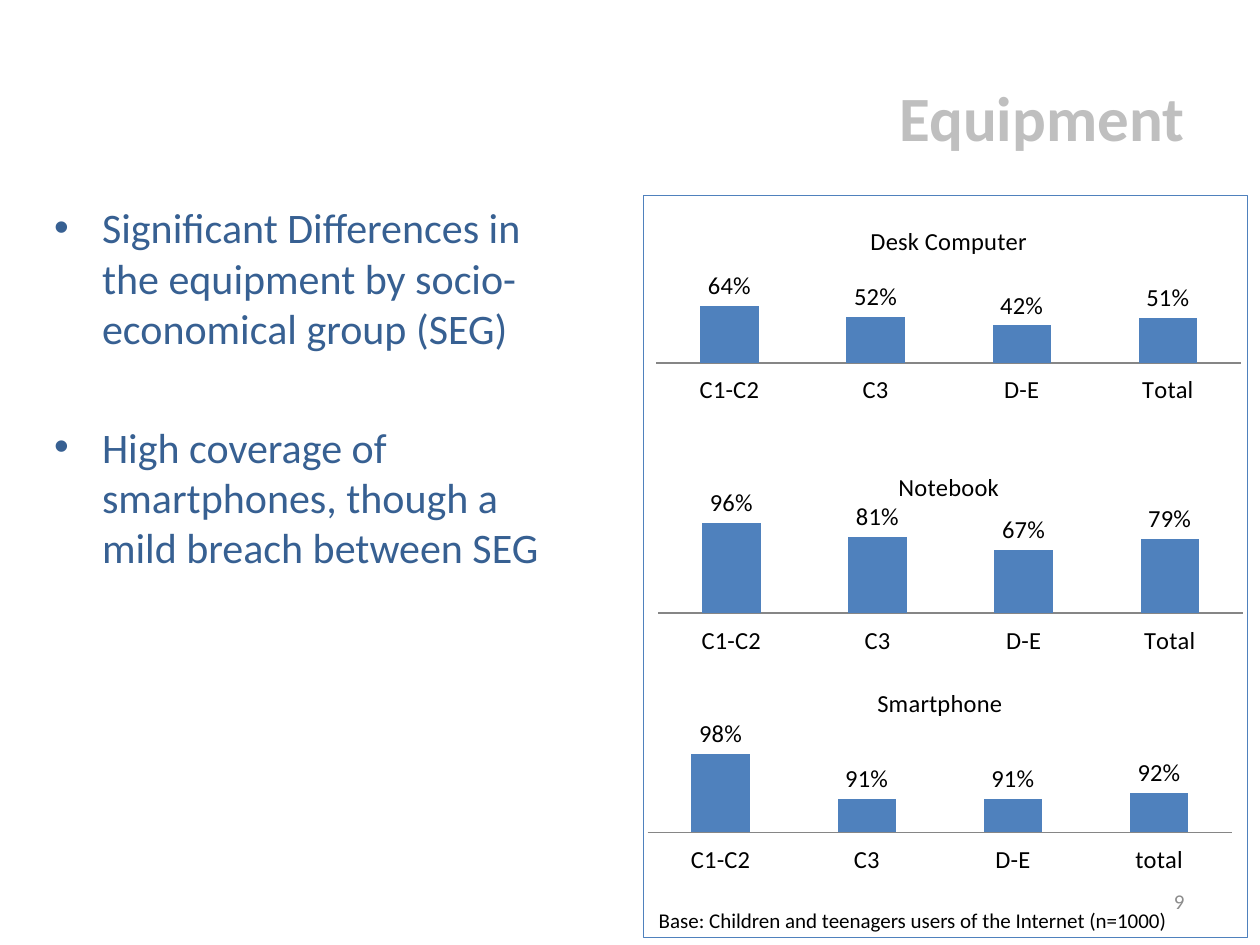
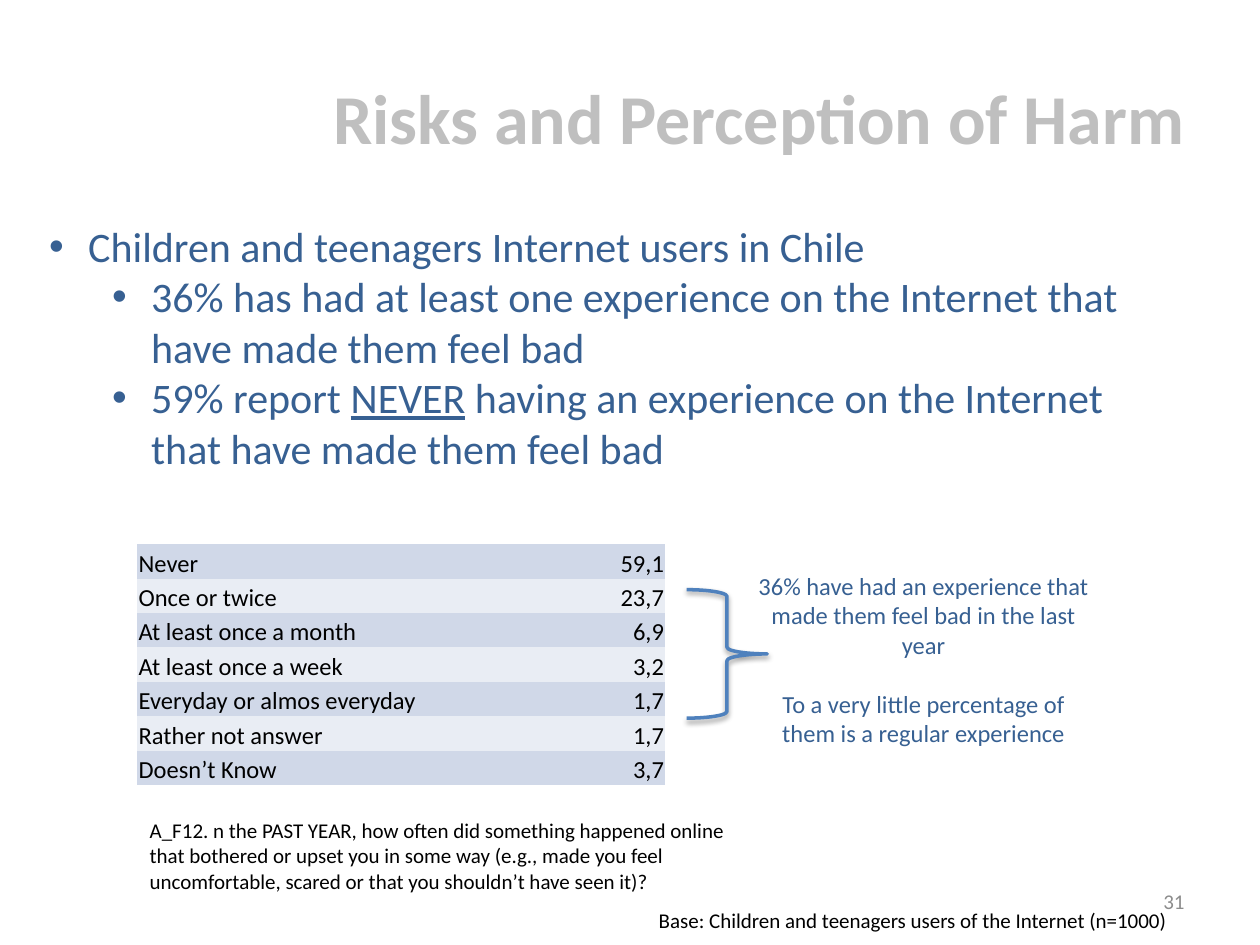
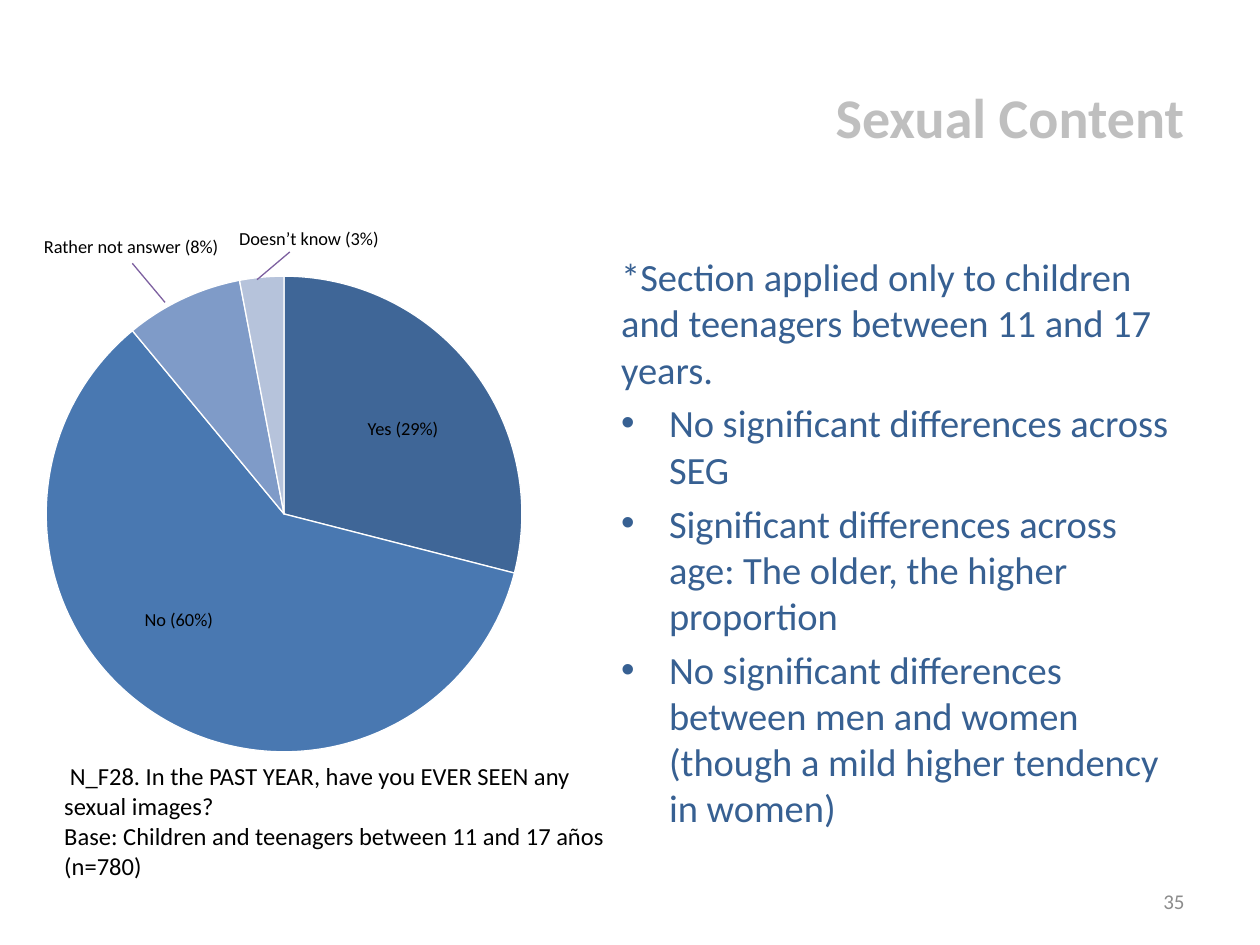
from lxml.etree import SubElement
from pptx import Presentation
from pptx.chart.data import CategoryChartData
from pptx.dml.color import RGBColor
from pptx.enum.chart import XL_CHART_TYPE, XL_LABEL_POSITION, XL_TICK_LABEL_POSITION, XL_TICK_MARK
from pptx.enum.shapes import MSO_CONNECTOR, MSO_SHAPE
from pptx.enum.text import MSO_ANCHOR, MSO_AUTO_SIZE, PP_ALIGN
from pptx.oxml import parse_xml
from pptx.oxml.ns import nsdecls, qn
from pptx.util import Inches, Pt

FONT = "Calibri"
BLACK = RGBColor(0x00, 0x00, 0x00)
WHITE = RGBColor(0xFF, 0xFF, 0xFF)
TITLE_GRAY = RGBColor(0xBF, 0xBF, 0xBF)
NUMBER_GRAY = RGBColor(0x8C, 0x8C, 0x8C)
AXIS_GRAY = RGBColor(0x86, 0x86, 0x86)
TEXT_BLUE = RGBColor(0x37, 0x60, 0x92)
ACCENT_BLUE = RGBColor(0x4F, 0x81, 0xBD)
LEADER_PURPLE = RGBColor(0x7D, 0x60, 0xA0)
ROW_COLORS = [RGBColor(0xD0, 0xD8, 0xE8), RGBColor(0xE9, 0xED, 0xF4)]
SLICE_COLORS = [
    RGBColor(0x3F, 0x66, 0x97),
    RGBColor(0x49, 0x78, 0xB1),
    RGBColor(0x7F, 0x9B, 0xC8),
    RGBColor(0xB6, 0xC3, 0xDB),
]
PLAIN_TABLE_STYLE = "{2D5ABB26-0587-4C30-8999-92F81FD0307C}"
BASE_NOTE = "Base: Children and teenagers users of the Internet (n=1000)"


def inches(box):
    return [Inches(length) for length in box]


def place(shape, box):
    shape.left, shape.top, shape.width, shape.height = inches(box)


def format_font(font, size, color, bold=False):
    font.name = FONT
    font.size = Pt(size)
    font.bold = bold
    font.color.rgb = color


def add_run(paragraph, text, size, color, bold=False):
    run = paragraph.add_run()
    run.text = text
    format_font(run.font, size, color, bold)
    return run


def next_paragraph(text_frame, index):
    return text_frame.add_paragraph() if index else text_frame.paragraphs[0]


def add_text(slide, box, texts, size, color=BLACK, align=PP_ALIGN.LEFT, wrap=True, gap=0):
    shape = slide.shapes.add_textbox(*inches(box))
    text_frame = shape.text_frame
    text_frame.word_wrap = wrap
    text_frame.auto_size = MSO_AUTO_SIZE.SHAPE_TO_FIT_TEXT
    for index, text in enumerate(texts):
        paragraph = next_paragraph(text_frame, index)
        paragraph.alignment = align
        paragraph.space_before = Pt(gap if index else 0)
        add_run(paragraph, text, size, color)
    return shape


def set_indent(paragraph, left, hanging, bulleted=True):
    properties = paragraph._p.get_or_add_pPr()
    properties.set("marL", str(Inches(left)))
    properties.set("indent", str(-Inches(hanging)))
    if bulleted:
        SubElement(properties, qn("a:buFont")).set("typeface", "Arial")
        SubElement(properties, qn("a:buChar")).set("char", "•")
    else:
        SubElement(properties, qn("a:buNone"))


def start_slide(presentation, title, title_size, number):
    slide = presentation.slides.add_slide(presentation.slide_layouts[1])
    place(slide.shapes.title, (0.5, 0.3, 9, 1.25))
    text_frame = slide.shapes.title.text_frame
    text_frame.vertical_anchor = MSO_ANCHOR.MIDDLE
    paragraph = text_frame.paragraphs[0]
    paragraph.alignment = PP_ALIGN.RIGHT
    add_run(paragraph, title, title_size, TITLE_GRAY, bold=True)
    number_box = add_text(slide, (7.17, 6.95, 2.33, 0.4), [number], 12, NUMBER_GRAY, PP_ALIGN.RIGHT)
    number_box.text_frame.auto_size = MSO_AUTO_SIZE.NONE
    number_box.text_frame.vertical_anchor = MSO_ANCHOR.MIDDLE
    return slide


def fill_body(slide, box, items, size, gaps):
    body = slide.placeholders[1]
    place(body, box)
    text_frame = body.text_frame
    text_frame.auto_size = MSO_AUTO_SIZE.NONE
    for index, ((left, hanging, runs), gap) in enumerate(zip(items, gaps)):
        paragraph = next_paragraph(text_frame, index)
        paragraph.space_before = Pt(gap)
        set_indent(paragraph, left, hanging, bulleted=hanging > 0)
        for text, underlined in runs:
            add_run(paragraph, text, size, TEXT_BLUE).font.underline = underlined


def add_base_note(slide):
    add_text(slide, (5.13, 7.15, 4.27, 0.3), [BASE_NOTE], 12, wrap=False)


def set_plot_layout(chart, layout):
    plot_area = chart._chartSpace.chart.plotArea
    for old_layout in plot_area.findall(qn("c:layout")):
        plot_area.remove(old_layout)
    lengths = "".join(f'<c:{name} val="{value}"/>' for name, value in zip("xywh", layout))
    plot_area.insert(0, parse_xml(
        f'<c:layout {nsdecls("c")}><c:manualLayout><c:layoutTarget val="inner"/>'
        f'<c:xMode val="edge"/><c:yMode val="edge"/>{lengths}</c:manualLayout></c:layout>'
    ))


def add_chart(slide, kind, box, categories, values, size, layout, number_format="General"):
    data = CategoryChartData(number_format=number_format)
    data.categories = categories
    data.add_series("Series 1", values)
    chart = slide.shapes.add_chart(kind, *inches(box), data).chart
    format_font(chart.font, size, BLACK)
    chart.has_legend = False
    chart.has_title = False
    set_plot_layout(chart, layout)
    return chart


def add_equipment_chart(slide, box, title, categories, values, scale, layout):
    chart = add_chart(slide, XL_CHART_TYPE.COLUMN_CLUSTERED, box, categories, values, 14, layout, "0%")
    chart.has_title = True
    add_run(chart.chart_title.text_frame.paragraphs[0], title, 14, BLACK)
    chart.value_axis.minimum_scale, chart.value_axis.maximum_scale = scale
    chart.value_axis.has_major_gridlines = False
    chart.value_axis.visible = False
    axis = chart.category_axis
    axis.major_tick_mark = XL_TICK_MARK.NONE
    axis.tick_label_position = XL_TICK_LABEL_POSITION.LOW
    axis.format.line.color.rgb = AXIS_GRAY
    plot = chart.plots[0]
    plot.vary_by_categories = False
    plot.gap_width = 150
    plot.overlap = -25
    plot.series[0].format.fill.solid()
    plot.series[0].format.fill.fore_color.rgb = ACCENT_BLUE
    plot.has_data_labels = True
    labels = plot.data_labels
    labels.show_value = True
    labels.number_format = "0%"
    labels.number_format_is_linked = False
    labels.position = XL_LABEL_POSITION.OUTSIDE_END
    format_font(labels.font, 14, BLACK)


def add_outline(slide, kind, box, width):
    shape = slide.shapes.add_shape(kind, *inches(box))
    shape.shadow.inherit = False
    shape.fill.background()
    shape.line.color.rgb = ACCENT_BLUE
    shape.line.width = Pt(width)
    return shape


def add_plain_table(slide, box, rows, column_widths):
    table = slide.shapes.add_table(len(rows), len(column_widths), *inches(box)).table
    table.first_row = table.horz_banding = False
    table._tbl.tblPr.find(qn("a:tableStyleId")).text = PLAIN_TABLE_STYLE
    for column, width in zip(table.columns, column_widths):
        column.width = Inches(width)
    for row, texts in zip(table.rows, rows):
        for column_index, (cell, text) in enumerate(zip(row.cells, texts)):
            cell.margin_left = cell.margin_right = cell.margin_top = Inches(0.01)
            cell.margin_bottom = 0
            cell.vertical_anchor = MSO_ANCHOR.BOTTOM
            cell.fill.background()
            for index, line in enumerate(text.split("\n")):
                paragraph = next_paragraph(cell.text_frame, index)
                paragraph.alignment = PP_ALIGN.RIGHT if column_index else PP_ALIGN.LEFT
                add_run(paragraph, line, 14, BLACK)
    return table


def add_frequency_table(slide, box):
    rows = [
        ("Never", "59,1"),
        ("Once or twice", "23,7"),
        ("At least once a month", "6,9"),
        ("At least once a week", "3,2"),
        ("Everyday or almos everyday", "1,7"),
        ("Rather not answer", "1,7"),
        ("Doesn’t Know", "3,7"),
    ]
    table = add_plain_table(slide, box, rows, (2.76, 1.43))
    for index, row in enumerate(table.rows):
        for cell in row.cells:
            cell.fill.solid()
            cell.fill.fore_color.rgb = ROW_COLORS[index % 2]


def add_brace(slide, box):
    brace = add_outline(slide, MSO_SHAPE.RIGHT_BRACE, box, 2)
    effects = brace._element.spPr.find(qn("a:effectLst"))
    effects.append(parse_xml(
        f'<a:outerShdw {nsdecls("a")} blurRad="{Pt(3.1)}" dist="{Pt(1.6)}" dir="5400000" rotWithShape="0">'
        '<a:srgbClr val="000000"><a:alpha val="38000"/></a:srgbClr></a:outerShdw>'
    ))


def add_answer_pie(slide, box):
    left, top, width, height = box
    chart = add_chart(slide, XL_CHART_TYPE.PIE, box, ["1", "2", "3", "4"], [29, 60, 8, 3], 12,
                      (0.08, 0.035, 0.84, 0.93))
    for index, color in enumerate(SLICE_COLORS):
        slice_format = chart.plots[0].series[0].points[index].format
        slice_format.fill.solid()
        slice_format.fill.fore_color.rgb = color
        slice_format.line.color.rgb = WHITE
        slice_format.line.width = Pt(0.75)
    labels = [
        ("Rather not answer (8%)", 0.25, -0.23, 1.61),
        ("Doesn’t know (3%)", 1.8, -0.3, 1.33),
        ("Yes (29%)", 2.82, 1.21, 0.78),
        ("No (60%)", 1.05, 2.73, 0.75),
    ]
    for text, x, y, label_width in labels:
        add_text(slide, (left + x, top + y, label_width, 0.28), [text], 10.5, wrap=False)
    for ends in [(1.31, 0.35, 1.05, 0.04), (2.04, 0.17, 2.3, -0.05)]:
        x1, y1, x2, y2 = ends
        points = inches((left + x1, top + y1, left + x2, top + y2))
        leader = slide.shapes.add_connector(MSO_CONNECTOR.STRAIGHT, *points)
        leader.line.color.rgb = LEADER_PURPLE
        leader.line.width = Pt(0.75)
        SubElement(leader._element.spPr, qn("a:effectLst"))


def build_equipment(presentation):
    slide = start_slide(presentation, "Equipment", 36, "9")
    items = [
        (0.38, 0.38, [("Significant Differences in the equipment by socio-economical group (SEG)", False)]),
        (0.38, 0.38, [("High coverage of smartphones, though a mild breach between SEG", False)]),
    ]
    fill_body(slide, (0.33, 1.55, 4.3, 3.25), items, 24, (4.8, 39))
    groups = ["C1-C2", "C3", "D-E"]
    charts = [
        ((5.03, 1.65, 5, 1.78), "Desk Computer", groups + ["Total"], [0.64, 0.52, 0.42, 0.51],
         (0, 0.7), (0.036, 0.414, 0.928, 0.278)),
        ((5.03, 3.61, 5, 1.6), "Notebook", groups + ["Total"], [0.96, 0.81, 0.67, 0.79],
         (0, 1.2), (0.039, 0.226, 0.928, 0.56)),
        ((4.96, 5.32, 5, 1.67), "Smartphone", groups + ["total"], [0.98, 0.91, 0.91, 0.92],
         (0.86, 1), (0.036, 0.334, 0.928, 0.436)),
    ]
    for chart in charts:
        add_equipment_chart(slide, *chart)
    add_outline(slide, MSO_SHAPE.RECTANGLE, (5.11, 1.55, 4.79, 5.89), 0.75)
    add_base_note(slide)


def build_risks(presentation):
    slide = start_slide(presentation, "Risks and Perception of Harm", 40, "31")
    items = [
        (0.31, 0.31, [("Children and teenagers Internet users in Chile", False)]),
        (0.81, 0.31, [("36% has had at least one experience on the Internet that have made them feel bad", False)]),
        (0.81, 0.31, [("59% report ", False), ("NEVER", True),
                      (" having an experience on the Internet that have made them feel bad", False)]),
    ]
    fill_body(slide, (0.29, 1.7, 9.04, 2.12), items, 24, (0, 0, 0))
    question = ("A_F12. n the PAST YEAR, how often did something happened online that bothered or upset you "
                "in some way (e.g., made you feel uncomfortable, scared or that you shouldn’t have seen it)?")
    add_text(slide, (1.09, 6.44, 5, 0.71), [question], 12)
    add_brace(slide, (5.45, 4.68, 0.64, 1.02))
    findings = [
        "36% have had an experience that made them feel bad in the last year",
        "To a very little percentage of them is a regular experience",
    ]
    add_text(slide, (5.92, 4.48, 2.82, 1.51), findings, 14, TEXT_BLUE, PP_ALIGN.CENTER, gap=17)
    add_frequency_table(slide, (1.09, 4.32, 4.19, 1.91))
    add_base_note(slide)


def build_sexual_content(presentation):
    slide = start_slide(presentation, "Sexual Content", 32, "35")
    question = (" N_F28. In the PAST YEAR, have you EVER SEEN any sexual images?\n"
                "Base: Children and teenagers between 11 and 17 años (n=780)")
    add_plain_table(slide, (0.5, 6.04, 4.33, 0.95), [(question,)], (4.33,))
    findings = [
        "No significant differences across SEG",
        "Significant differences across age: The older, the higher proportion",
        "No significant differences between men and women (though a mild higher tendency in women)",
    ]
    items = [(0, 0, [("*Section applied only to children and teenagers between 11 and 17 years.", False)])]
    items += [(0.38, 0.38, [(finding, False)]) for finding in findings]
    fill_body(slide, (4.83, 1.96, 4.67, 5), items, 22, [4.4] * len(items))
    add_answer_pie(slide, (0, 2.05, 4.51, 4.06))


def main():
    presentation = Presentation()
    presentation.slide_width = Inches(10)
    presentation.slide_height = Inches(7.5)
    build_equipment(presentation)
    build_risks(presentation)
    build_sexual_content(presentation)
    presentation.save("out.pptx")


if __name__ == "__main__":
    main()
